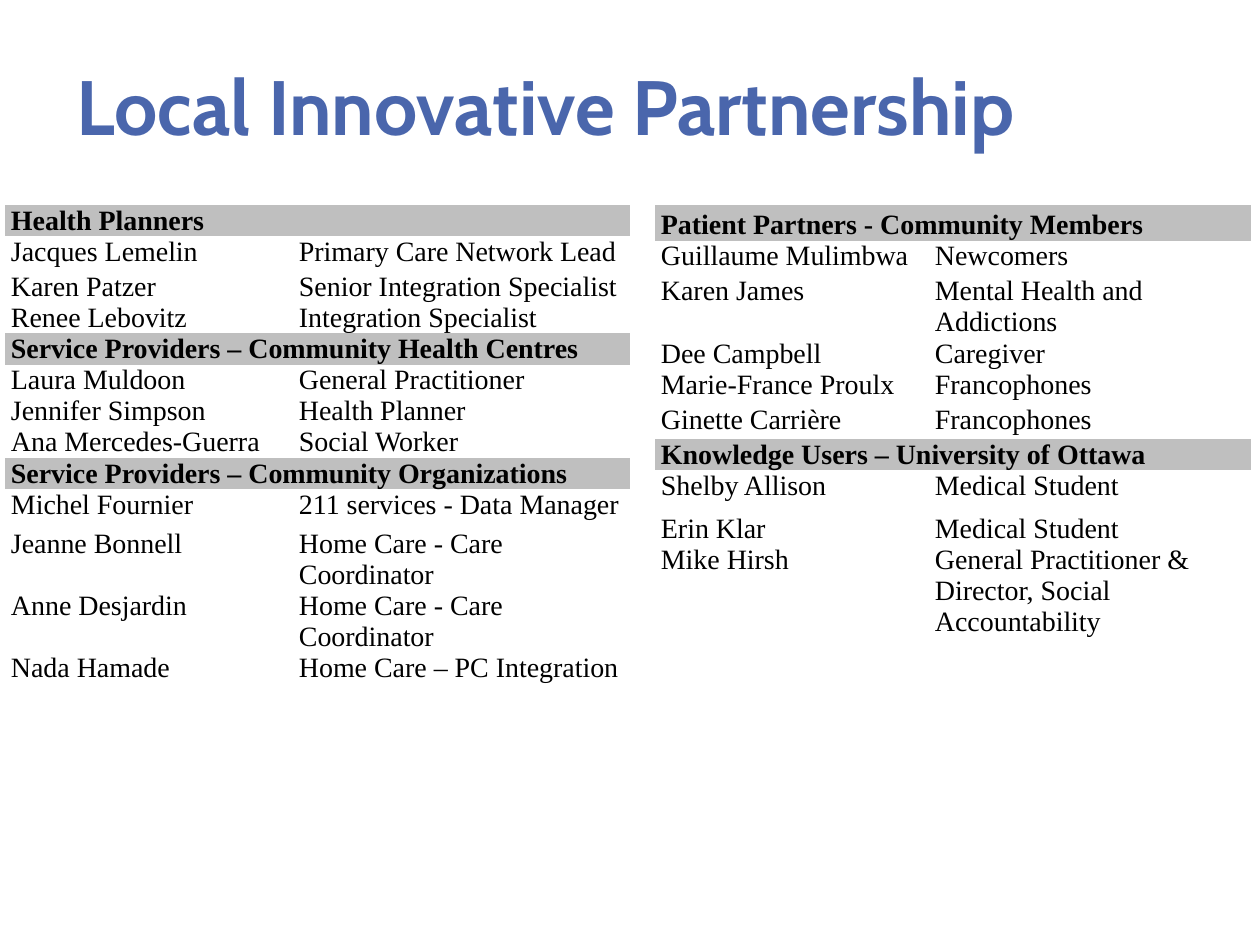
"""Build the slide that lists the members of a local partnership."""
from dataclasses import dataclass

from pptx import Presentation
from pptx.dml.color import RGBColor
from pptx.enum.text import MSO_ANCHOR, MSO_AUTO_SIZE, PP_ALIGN
from pptx.oxml.ns import qn
from pptx.slide import Slide
from pptx.table import _Cell
from pptx.text.text import TextFrame
from pptx.util import Emu, Pt

LEFT = PP_ALIGN.LEFT
TOP = MSO_ANCHOR.TOP
MIDDLE = MSO_ANCHOR.MIDDLE
FIXED = MSO_AUTO_SIZE.NONE
SCALE = 914400 / 126
PLAIN = "{2D5ABB26-0587-4C30-8999-92F81FD0307C}"
COLORS = {"title": "4A66AC", "text": "000000", "band": "BFBFBF"}


@dataclass(frozen=True)
class Row:
    high: int
    name: str
    role: str = ""
    space: float = 1.0


@dataclass(frozen=True)
class Roster:
    left: int
    top: int
    cols: tuple[int, int]
    rows: tuple[Row, ...]


ROSTERS = (
    Roster(5, 205, (288, 337), (
        Row(24, "Health Planners"),
        Row(35, "Jacques Lemelin", "Primary Care Network Lead"),
        Row(30, "Karen Patzer", "Senior Integration Specialist"),
        Row(30, "Renee Lebovitz", "Integration Specialist"),
        Row(30, "Service Providers – Community Health Centres"),
        Row(30, "Laura Muldoon", "General Practitioner"),
        Row(30, "Jennifer Simpson", "Health Planner"),
        Row(30, "Ana Mercedes-Guerra", "Social Worker"),
        Row(30, "Service Providers – Community Organizations"),
        Row(39, "Michel Fournier", "211 services - Data Manager"),
        Row(33, "Jeanne Bonnell", "Home Care - Care Coordinator"),
        Row(35, "Anne Desjardin", "Home Care - Care Coordinator"),
        Row(35, "Nada Hamade", "Home Care – PC Integration"),
    )),
    Roster(655, 205, (274, 322), (
        Row(30, "Patient Partners - Community Members", space=1.15),
        Row(35, "Guillaume Mulimbwa", "Newcomers"),
        Row(35, "Karen James", "Mental Health and Addictions"),
        Row(26, "Dee Campbell", "Caregiver"),
        Row(35, "Marie-France Proulx", "Francophones"),
        Row(35, "Ginette Carrière", "Francophones"),
        Row(30, "Knowledge Users – University of Ottawa"),
        Row(43, "Shelby Allison", "Medical Student"),
        Row(30, "Erin Klar", "Medical Student"),
        Row(30, "Mike Hirsh",
            "General Practitioner & Director, Social Accountability"),
    )),
)


def px(count: int) -> Emu:
    """Turn pixels into EMU."""
    return Emu(round(count * SCALE))


def write(frame: TextFrame, text: str, *, size: int = 16,
          face: str = "Times New Roman", color: str = "text",
          bold: bool = False, space: float = 1.0) -> None:
    """Fill a text frame with one formatted paragraph."""
    para = frame.paragraphs[0]
    para.alignment = LEFT
    para.line_spacing = space
    run = para.add_run()
    run.text = text
    font = run.font
    font.size = Pt(size)
    font.name = face
    font.bold = bold
    font.color.rgb = RGBColor.from_string(COLORS[color])


def draw_cell(cell: _Cell, text: str, head: bool, space: float) -> None:
    """Format one cell and write its text."""
    cell.margin_left = cell.margin_right = px(6)
    cell.margin_top = cell.margin_bottom = 0
    cell.vertical_anchor = TOP
    if head:
        cell.fill.solid()
        cell.fill.fore_color.rgb = RGBColor.from_string(COLORS["band"])
    else:
        cell.fill.background()
    write(cell.text_frame, text, bold=head, space=space)


def draw_roster(slide: Slide, roster: Roster) -> None:
    """Draw one table of groups and their members."""
    high = sum(row.high for row in roster.rows)
    table = slide.shapes.add_table(
        len(roster.rows), len(roster.cols), px(roster.left), px(roster.top),
        px(sum(roster.cols)), px(high)).table
    table.first_row = table.horz_banding = False
    table._tbl.tblPr.find(qn("a:tableStyleId")).text = PLAIN
    for col, wide in zip(table.columns, roster.cols):
        col.width = px(wide)
    for at, row in enumerate(roster.rows):
        table.rows[at].height = px(row.high)
        head = not row.role
        if head:
            table.cell(at, 0).merge(table.cell(at, 1))
        else:
            draw_cell(table.cell(at, 1), row.role, head, row.space)
        draw_cell(table.cell(at, 0), row.name, head, row.space)


def draw_title(slide: Slide, text: str) -> None:
    """Place and format the title."""
    title = slide.shapes.title
    title.left, title.top = px(64), px(26)
    title.width, title.height = px(1111), px(157)
    frame = title.text_frame
    frame.word_wrap = True
    frame.auto_size = FIXED
    frame.vertical_anchor = MIDDLE
    write(frame, text, size=44, face="Cabin", color="title", bold=True)


def main() -> None:
    """Build and save the deck."""
    deck = Presentation()
    deck.slide_width, deck.slide_height = px(1260), px(945)
    slide = deck.slides.add_slide(deck.slide_layouts[5])
    draw_title(slide, "Local Innovative Partnership")
    for roster in ROSTERS:
        draw_roster(slide, roster)
    deck.save("out.pptx")


if __name__ == "__main__":
    main()
